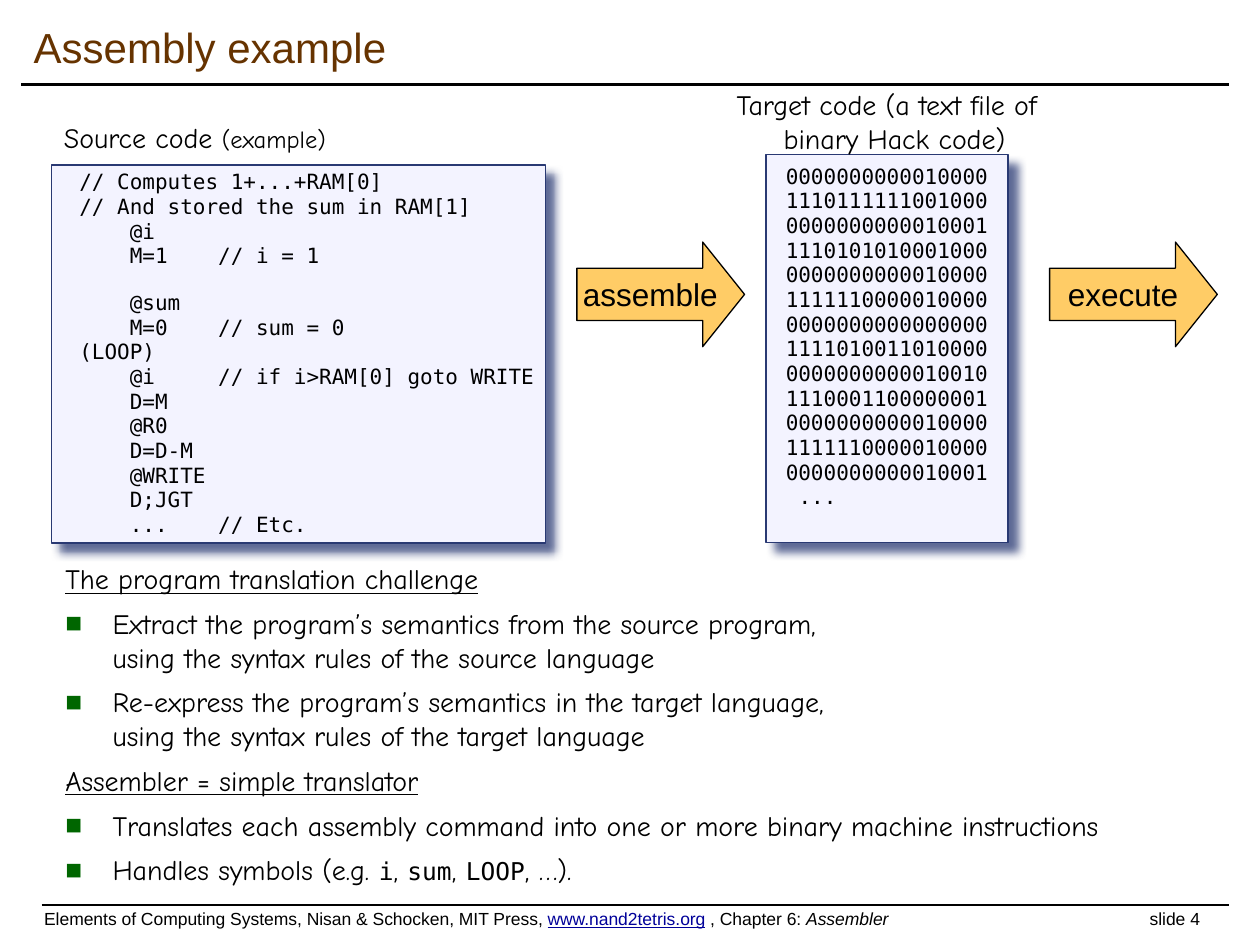
from copy import deepcopy

from lxml.etree import SubElement
from pptx import Presentation
from pptx.dml.color import RGBColor
from pptx.enum.shapes import MSO_CONNECTOR as Connector, MSO_SHAPE as Preset
from pptx.enum.text import MSO_ANCHOR as Anchor, PP_ALIGN as Align
from pptx.oxml.ns import qn
from pptx.util import Cm, Pt

SOURCE_CODE = """\
// Computes 1+...+RAM[0]
// And stored the sum in RAM[1]
    @i
    M=1    // i = 1

    @sum
    M=0    // sum = 0
(LOOP)
    @i     // if i>RAM[0] goto WRITE
    D=M
    @R0
    D=D-M
    @WRITE
    D;JGT
    ...    // Etc."""

BINARY_CODE = """\
0000000000010000
1110111111001000
0000000000010001
1110101010001000
0000000000010000
1111110000010000
0000000000000000
1111010011010000
0000000000010010
1110001100000001
0000000000010000
1111110000010000
0000000000010001
  ..."""


def color(hex_code):
    return RGBColor.from_string(hex_code)


def add_child(parent, tag, **attributes):
    return SubElement(parent, qn(tag), attributes)


def write(paragraph, text, font="Comic Neue", size=16, ink="000000",
          underline=False, italic=False):
    """Append formatted text; a newline becomes a line break."""
    for index, line in enumerate(text.split("\n")):
        if index:
            paragraph.add_line_break()
            line_break = paragraph._p[-1]
        run = paragraph.add_run()
        run.text = line
        run.font.name = font
        run.font.size = Pt(size)
        run.font.color.rgb = color(ink)
        run.font.underline = underline
        run.font.italic = italic
        if index:
            line_break.append(deepcopy(run._r.rPr))


def start_paragraph(frame, before=0, hang=0.95, align=Align.LEFT, line_spacing=1.0):
    """Return the next paragraph; the first one gets no space before."""
    is_first = not frame.paragraphs[0].runs
    paragraph = frame.paragraphs[0] if is_first else frame.add_paragraph()
    paragraph.alignment = align
    paragraph.line_spacing = line_spacing
    paragraph.space_before = Pt(0 if is_first else before)
    properties = paragraph._p.get_or_add_pPr()
    properties.set("marL", str(Cm(hang)))
    properties.set("indent", str(-Cm(hang)))
    return paragraph


class Deck:
    mono, sans = "DejaVu Sans Mono", "Arial"
    black, brown, link_blue, green = "000000", "663300", "000099", "006600"
    panel_fill, panel_edge, arrow_fill = "F3F3FF", "293973", "FFCC66"
    code_gap, code_blank_gap = 1.15, 13.8

    def __init__(self):
        self.presentation = Presentation()
        self.presentation.slide_width = Cm(25.4)
        self.presentation.slide_height = Cm(19.05)
        self.slide = self.presentation.slides.add_slide(
            self.presentation.slide_layouts[6])

    def rule(self, left, right, top, weight):
        line = self.slide.shapes.add_connector(
            Connector.STRAIGHT, Cm(left), Cm(top), Cm(right), Cm(top))
        line.line.color.rgb = color(self.black)
        line.line.width = Pt(weight)
        add_child(line._element.spPr, "a:effectLst")

    def text_area(self, left, top, width, height, anchor=Anchor.TOP):
        frame = self.slide.shapes.add_textbox(
            Cm(left), Cm(top), Cm(width), Cm(height)).text_frame
        frame.word_wrap = True
        frame.vertical_anchor = anchor
        return frame

    def block(self, preset, box, fill, edge):
        block = self.slide.shapes.add_shape(preset, *map(Cm, box))
        block.fill.solid()
        block.fill.fore_color.rgb = color(fill)
        block.line.color.rgb = color(edge)
        block.line.width = Pt(0.75)
        block.shadow.inherit = False
        return block

    def code_panel(self, box, code, insets, align=Align.LEFT):
        panel = self.block(Preset.RECTANGLE, box, self.panel_fill, self.panel_edge)
        effects = panel._element.spPr.find(qn("a:effectLst"))
        shadow = add_child(effects, "a:outerShdw", blurRad=str(Pt(5)),
                           dist=str(Pt(7.1)), dir="2700000", algn="ctr",
                           rotWithShape="0")
        shade = add_child(shadow, "a:srgbClr", val=self.panel_edge)
        add_child(shade, "a:alpha", val="75000")

        frame = panel.text_frame
        frame.word_wrap = True
        frame.vertical_anchor = Anchor.TOP
        (frame.margin_left, frame.margin_top,
         frame.margin_right, frame.margin_bottom) = map(Cm, insets)
        before = self.code_gap
        for line in code.split("\n"):
            if not line:
                before = self.code_blank_gap
                continue
            line_align = Align.LEFT if line.startswith(" ") else align
            paragraph = start_paragraph(frame, before, align=line_align,
                                        line_spacing=0.9)
            write(paragraph, line, font=self.mono, size=12)
            before = self.code_gap

    def step_arrow(self, left, label):
        arrow = self.block(Preset.RIGHT_ARROW, (left, 4.88, 3.38, 2.11),
                           self.arrow_fill, self.black)
        arrow.adjustments[0], arrow.adjustments[1] = 0.5, 0.4
        frame = arrow.text_frame
        frame.word_wrap = False
        frame.vertical_anchor = Anchor.MIDDLE
        write(start_paragraph(frame, hang=0, align=Align.CENTER), label,
              font=self.sans, size=18)

    def heading(self, frame, text):
        write(start_paragraph(frame, before=6.4), text, underline=True)

    def bullet(self, frame, text):
        paragraph = start_paragraph(frame, before=6.4)
        properties = paragraph._p.get_or_add_pPr()
        add_child(add_child(properties, "a:buClr"), "a:srgbClr", val=self.green)
        add_child(properties, "a:buFont", typeface=self.sans)
        add_child(properties, "a:buChar", char="■")
        write(paragraph, text)
        return paragraph

    def footer_part(self, left, width, align):
        frame = self.text_area(left, 18.3, width, 0.69)
        frame.margin_top = frame.margin_bottom = 0
        return start_paragraph(frame, hang=0, align=align)

    def footer(self):
        small = dict(font=self.sans, size=10)
        credit = self.footer_part(0.64, 20.5, Align.LEFT)
        write(credit, "Elements of Computing Systems, Nisan & Schocken, MIT Press, ",
              **small)
        write(credit, "www.nand2tetris.org", ink=self.link_blue, underline=True,
              **small)
        write(credit, " , Chapter 6: ", **small)
        write(credit, "Assembler", italic=True, **small)
        write(self.footer_part(21.44, 3, Align.RIGHT), "slide 4", **small)


def main():
    deck = Deck()
    deck.rule(0.43, 24.77, 1.7, 2)
    deck.rule(0.84, 24.77, 18.24, 1)
    deck.footer()

    title = deck.text_area(0.43, 0.2, 24.33, 1.47, Anchor.MIDDLE)
    write(start_paragraph(title, hang=0), "Assembly example",
          font=deck.sans, size=24, ink=deck.brown)

    deck.code_panel((15.44, 3.12, 4.88, 7.82), BINARY_CODE,
                    (0.15, 0.23, 0.15, 0.23), Align.CENTER)
    target_label = start_paragraph(deck.text_area(14.6, 1.65, 7.85, 1.07))
    write(target_label, "Target code (a text file of binary Hack code)")

    deck.code_panel((1.04, 3.33, 9.96, 7.62), SOURCE_CODE, (0.56, 0.13, 0, 0.13))
    source_label = start_paragraph(deck.text_area(1.04, 2.31, 8.43, 1.07))
    write(source_label, "Source code ")
    write(source_label, "(example)", size=14)

    deck.step_arrow(11.63, "assemble")
    deck.step_arrow(21.16, "execute")

    body = deck.text_area(1.07, 11.2, 23.6, 7.01)
    deck.heading(body, "The program translation challenge")
    deck.bullet(body, "Extract the program’s semantics from the source program,\n"
                      "using the syntax rules of the source language")
    deck.bullet(body, "Re-express the program’s semantics in the target language,\n"
                      "using the syntax rules of the target language")
    deck.heading(body, "Assembler = simple translator")
    deck.bullet(body, "Translates each assembly command into one or more "
                      "binary machine instructions")
    symbols = deck.bullet(body, "Handles symbols (e.g. ")
    for symbol, separator in (("i", ", "), ("sum", ", "), ("LOOP", ", …).")):
        write(symbols, symbol, font=deck.mono, size=14)
        write(symbols, separator)

    deck.presentation.save("out.pptx")


if __name__ == "__main__":
    main()
